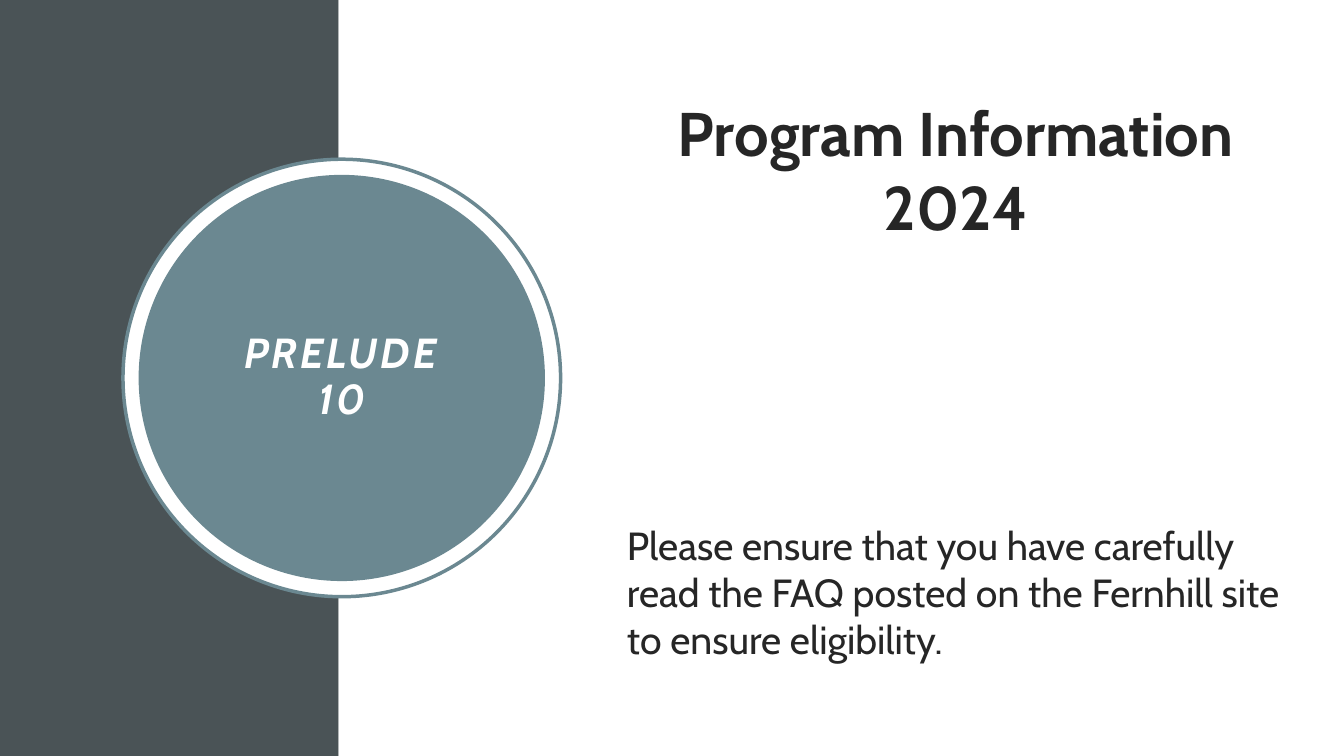
import pptx
import pptx.util
import pptx.dml.color
import pptx.enum.shapes
import pptx.enum.text
from dataclasses import dataclass

Inches, Pt = pptx.util.Inches, pptx.util.Pt
RGB = pptx.dml.color.RGBColor.from_string
SHAPE = pptx.enum.shapes.MSO_SHAPE
ALIGN = pptx.enum.text.PP_ALIGN
MIDDLE = pptx.enum.text.MSO_ANCHOR.MIDDLE


@dataclass(frozen=True)
class Theme:
    font: str = "Cabin"
    slate: str = "4A5356"
    teal: str = "6B8891"
    white: str = "FFFFFF"
    ink: str = "262626"
    title: int = 44
    badge: int = 30
    body: int = 28


def apply(obj, fmt):
    for name, value in fmt.items():
        setattr(obj, name, value)


class SlideBuilder:
    def __init__(self, slide, theme):
        self.slide, self.theme = slide, theme

    def shape(self, kind, left, top, width, height, fill, line=None):
        sp = self.slide.shapes.add_shape(
            kind, Inches(left), Inches(top), Inches(width), Inches(height))
        sp.shadow.inherit = False
        sp.fill.solid()
        sp.fill.fore_color.rgb = RGB(fill)
        if line:
            sp.line.color.rgb = RGB(line)
            sp.line.width = Pt(2.5)
        else:
            sp.line.fill.background()
        return sp

    def circle(self, cx, cy, diameter, fill, line=None):
        return self.shape(SHAPE.OVAL, cx - diameter / 2, cy - diameter / 2,
                          diameter, diameter, fill, line)

    def textbox(self, left, top, width, height):
        return self.slide.shapes.add_textbox(
            Inches(left), Inches(top), Inches(width), Inches(height))

    def frame(self, sp, inset):
        tf = sp.text_frame
        sides = ("left", "top", "right", "bottom")
        apply(tf, {"word_wrap": True, "vertical_anchor": MIDDLE,
                   **{f"margin_{side}": Inches(inset) for side in sides}})
        return tf

    def paragraph(self, p, text, size, color, para, **font):
        apply(p, para)
        r = p.add_run()
        r.text = text
        apply(r.font, {"name": self.theme.font, "size": Pt(size), **font})
        r.font.color.rgb = RGB(color)
        return r


def main():
    prs = pptx.Presentation()
    prs.slide_width, prs.slide_height = Inches(13.33), Inches(7.5)
    t = Theme()
    s = SlideBuilder(prs.slides.add_slide(prs.slide_layouts[6]), t)

    # Side band and page panel
    band = 3.36
    s.shape(SHAPE.RECTANGLE, 0, 0, band, 7.5, t.slate)
    s.shape(SHAPE.RECTANGLE, band, 0, 13.33 - band, 7.5, t.white)

    # Ringed badge
    center = (3.39, 3.75)
    s.circle(*center, 4.34, t.white, t.teal)
    badge = s.circle(*center, 4.03, t.teal)
    tf = s.frame(badge, 0.2)
    r = s.paragraph(tf.paragraphs[0], "PRELUDE 10", t.badge, t.white,
                    {"alignment": ALIGN.CENTER, "line_spacing": 0.9,
                     "space_after": Pt(6)}, bold=True, italic=True)
    r.font._element.set("spc", "200")  # letter spacing

    # Title, with the notice set well below it
    tf = s.frame(s.textbox(6.12, 0.42, 6.72, 6.67), 0.1)
    s.paragraph(tf.paragraphs[0], "Program Information 2024", t.title, t.ink,
                {"alignment": ALIGN.CENTER, "space_before": Pt(10)}, bold=True)
    s.paragraph(tf.add_paragraph(),
                "Please ensure that you have carefully read the FAQ posted "
                "on the Fernhill site to ensure eligibility.",
                t.body, t.ink,
                {"alignment": ALIGN.LEFT, "space_before": Pt(199)}, bold=False)

    prs.save("out.pptx")


if __name__ == "__main__":
    main()
